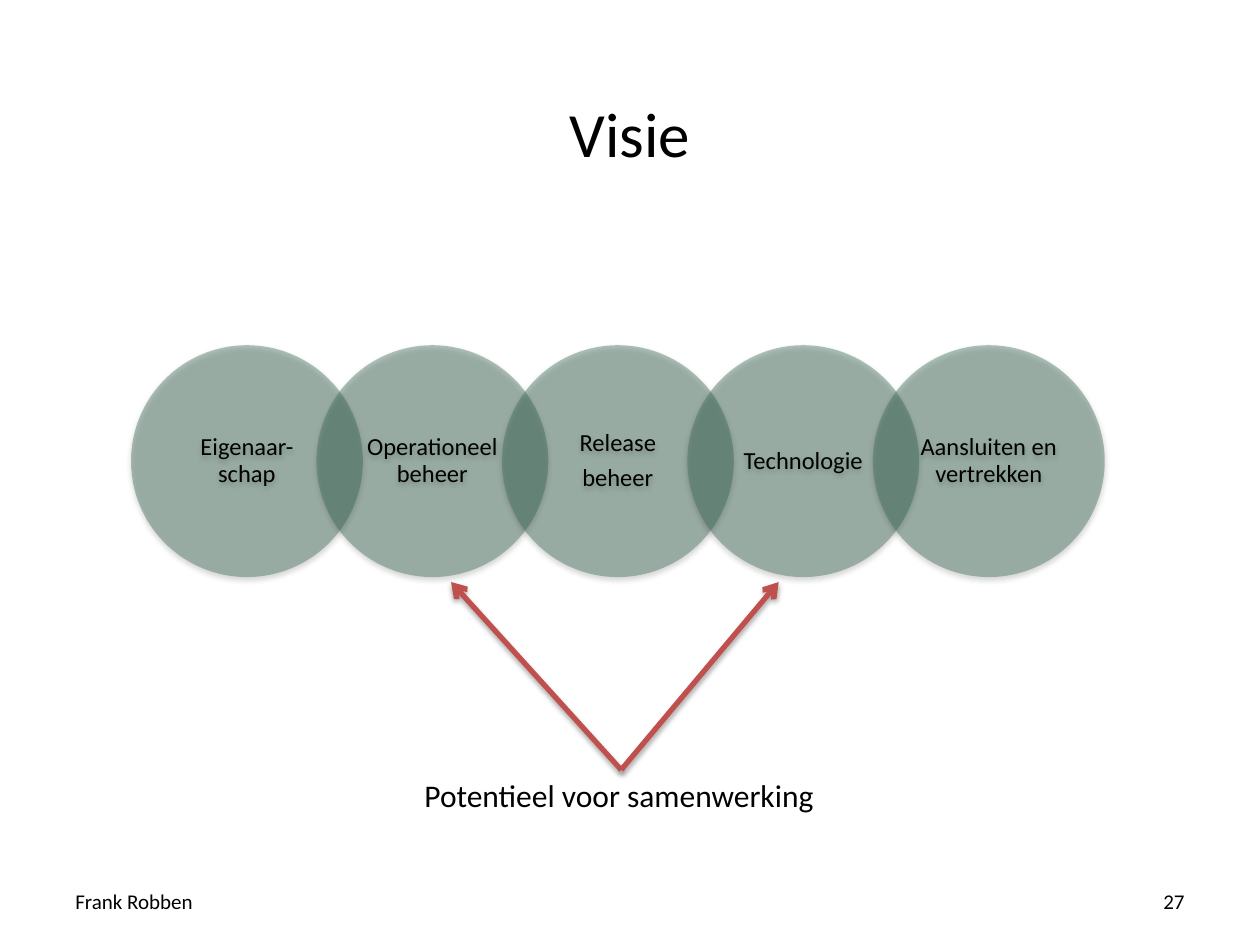
from lxml.etree import SubElement
from pptx import Presentation
from pptx.dml.color import RGBColor
from pptx.enum.shapes import MSO_CONNECTOR, MSO_SHAPE
from pptx.enum.text import MSO_ANCHOR, PP_ALIGN
from pptx.oxml.ns import qn
from pptx.util import Inches, Pt

TITLE = "Visie"
THEMES = [
    "Eigenaar-schap",
    "Operationeel beheer",
    "Release\nbeheer",
    "Technologie",
    "Aansluiten en vertrekken",
]
CAPTION = "Potentieel voor samenwerking"
AUTHOR = "Frank Robben"
PAGE = "27"

BLACK = RGBColor(0x00, 0x00, 0x00)
GREEN = RGBColor(0x3E, 0x6E, 0x5A)
RED = RGBColor(0xC0, 0x50, 0x4D)
FONT = "Calibri"

DIAMETER = 1.84
STEP = DIAMETER * 0.8
CHAIN_LEFT, CHAIN_TOP = 1.04, 2.74
ARROW_START = (4.93, 6.11)
ARROW_ENDS = [(3.58, 4.62), (6.18, 4.62)]


def format_text(frame, size, align):
    for paragraph in frame.paragraphs:
        paragraph.alignment = align
        for run in paragraph.runs:
            run.font.name = FONT
            run.font.size = Pt(size)
            run.font.color.rgb = BLACK


def add_label(slide, text, left, top, width, size=12, align=PP_ALIGN.LEFT,
              anchor=MSO_ANCHOR.MIDDLE, wrap=True):
    frame = slide.shapes.add_textbox(
        Inches(left), Inches(top), Inches(width), Inches(0.4)).text_frame
    frame.text = text
    frame.word_wrap = wrap
    frame.vertical_anchor = anchor
    format_text(frame, size, align)


def add_shadow(shape, distance, opacity):
    """Soft black shadow straight below; distance in points, opacity in percent."""
    effects = SubElement(shape._element.spPr, qn("a:effectLst"))
    shadow = SubElement(effects, qn("a:outerShdw"), blurRad=str(Pt(3.1)),
                        dist=str(Pt(distance)), dir="5400000", rotWithShape="0")
    color = SubElement(shadow, qn("a:srgbClr"), val=str(BLACK))
    SubElement(color, qn("a:alpha"), val=str(opacity * 1000))


def add_circle(slide, text, left):
    circle = slide.shapes.add_shape(
        MSO_SHAPE.OVAL, Inches(left), Inches(CHAIN_TOP),
        Inches(DIAMETER), Inches(DIAMETER))
    circle.fill.solid()
    circle.fill.fore_color.rgb = GREEN
    color = circle._element.spPr.find(".//" + qn("a:srgbClr"))
    SubElement(color, qn("a:alpha"), val="41000")
    circle.line.fill.background()
    add_shadow(circle, 1.6, 38)

    frame = circle.text_frame
    frame.text = text
    frame.word_wrap = True
    frame.vertical_anchor = MSO_ANCHOR.MIDDLE
    frame.margin_left = frame.margin_right = Inches(0.1)
    frame.margin_top = frame.margin_bottom = Inches(0.02)
    format_text(frame, 14, PP_ALIGN.CENTER)
    for paragraph in frame.paragraphs:
        paragraph.line_spacing = 0.9
        paragraph.space_after = Pt(5)


def add_arrow(slide, start, end):
    arrow = slide.shapes.add_connector(
        MSO_CONNECTOR.STRAIGHT, *(Inches(value) for value in start + end))
    arrow.line.color.rgb = RED
    arrow.line.width = Pt(3)
    SubElement(arrow.line._get_or_add_ln(), qn("a:tailEnd"), type="arrow")
    add_shadow(arrow, 1.8, 35)


def main():
    prs = Presentation()
    prs.slide_width, prs.slide_height = Inches(10), Inches(7.5)
    slide = prs.slides.add_slide(prs.slide_layouts[5])

    title = slide.shapes.title
    title.left, title.top = Inches(0.5), Inches(0.51)
    title.width, title.height = Inches(9), Inches(1.08)
    title.text_frame.text = TITLE
    title.text_frame.vertical_anchor = MSO_ANCHOR.MIDDLE
    format_text(title.text_frame, 36, PP_ALIGN.CENTER)

    for index, theme in enumerate(THEMES):
        add_circle(slide, theme, CHAIN_LEFT + index * STEP)

    add_label(slide, CAPTION, 3.27, 6.11, 3.33, size=18,
              anchor=MSO_ANCHOR.TOP, wrap=False)
    for end in ARROW_ENDS:
        add_arrow(slide, ARROW_START, end)

    add_label(slide, AUTHOR, 0.5, 6.95, 2.33)
    add_label(slide, PAGE, 7.17, 6.95, 2.33, align=PP_ALIGN.RIGHT)

    prs.save("out.pptx")


if __name__ == "__main__":
    main()
